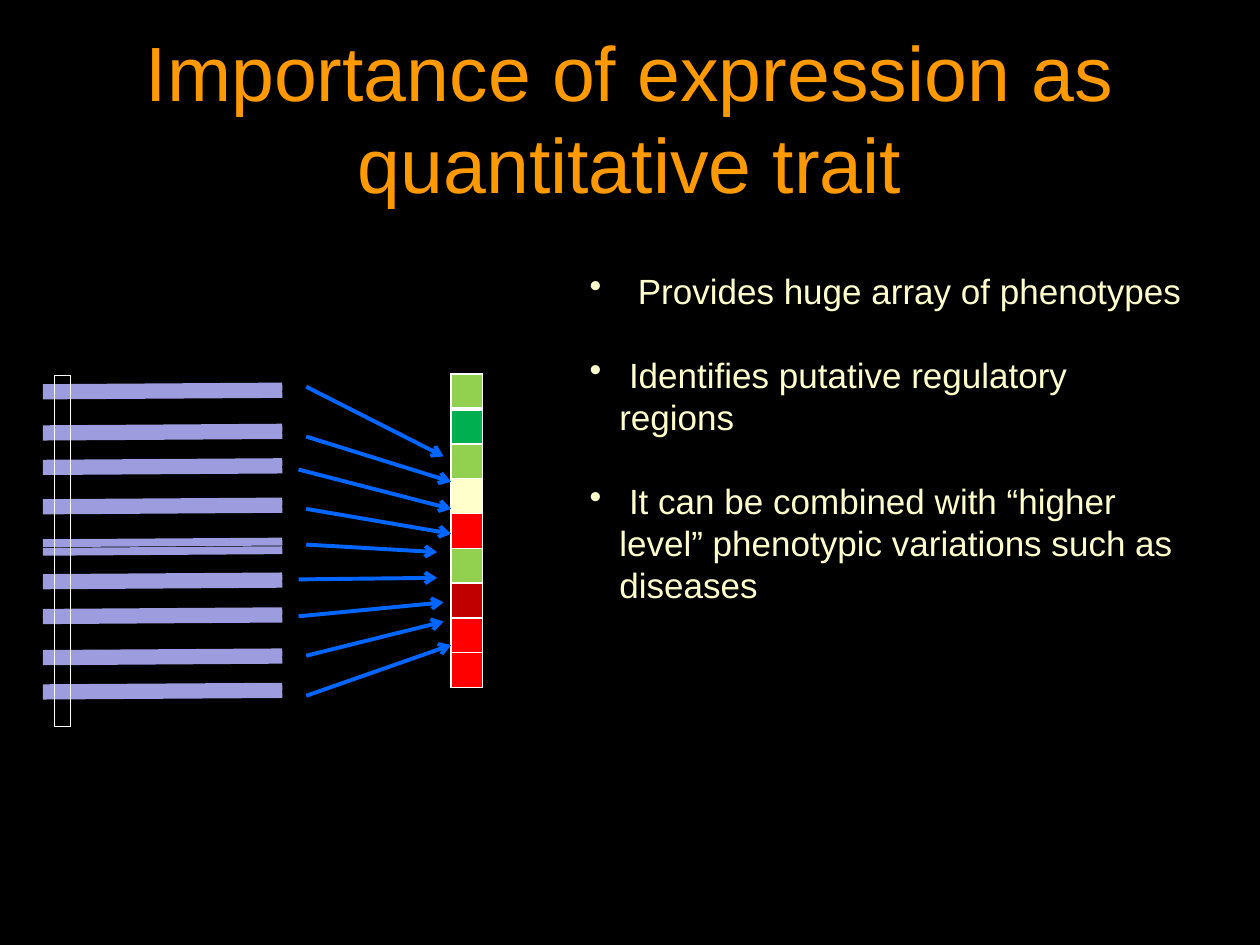
from lxml import etree
from pptx import Presentation
from pptx.dml.color import RGBColor
from pptx.enum import shapes, text
from pptx.oxml import ns
from pptx.util import Pt

BLACK = RGBColor(0x00, 0x00, 0x00)
WHITE = RGBColor(0xFF, 0xFF, 0xFF)
ORANGE = RGBColor(0xFF, 0x99, 0x00)
CREAM = RGBColor(0xFF, 0xFF, 0xCC)
LAVENDER = RGBColor(0x9C, 0x9C, 0xDF)
BLUE = RGBColor(0x00, 0x66, 0xFF)
LIME = RGBColor(0x92, 0xD0, 0x50)
GREEN = RGBColor(0x00, 0xB0, 0x50)
RED = RGBColor(0xFF, 0x00, 0x00)
DARK_RED = RGBColor(0xC0, 0x00, 0x00)


def add_line(group, x1, y1, x2, y2, color, width):
    c = group.shapes.add_connector(shapes.MSO_CONNECTOR.STRAIGHT,
                                   Pt(x1), Pt(y1), Pt(x2), Pt(y2))
    c.line.color.rgb = color
    c.line.width = Pt(width)
    etree.SubElement(c._element.spPr, ns.qn("a:effectLst"))
    return c


def add_border(cell, side, width):
    """Draw a white border; side is L, R, T or B, called in that order."""
    ln = etree.SubElement(cell._tc.get_or_add_tcPr(), ns.qn(f"a:ln{side}"),
                          w=str(Pt(width)))
    fill = etree.SubElement(ln, ns.qn("a:solidFill"))
    etree.SubElement(fill, ns.qn("a:srgbClr"), val=str(WHITE))


prs = Presentation()
prs.slide_width, prs.slide_height = Pt(720), Pt(540)
s = prs.slides.add_slide(prs.slide_layouts[6])
s.background.fill.solid()
s.background.fill.fore_color.rgb = BLACK

# Title
tf = s.shapes.add_textbox(Pt(36), Pt(21.6), Pt(648), Pt(90)).text_frame
tf.word_wrap = True
tf.vertical_anchor = text.MSO_ANCHOR.MIDDLE
p = tf.paragraphs[0]
p.text = "Importance of expression as quantitative trait"
p.alignment = text.PP_ALIGN.CENTER
p.font.name, p.font.size = "Arial", Pt(44)
p.font.color.rgb = ORANGE

# Bullets: text and left margin
BULLET_INDENT = 17
bullets = [
    (" Provides huge array of phenotypes", 22),
    (" Identifies putative regulatory regions", BULLET_INDENT),
    (" It can be combined with “higher level” phenotypic variations "
     "such as diseases", BULLET_INDENT),
]
tf = s.shapes.add_textbox(Pt(329.8), Pt(150.5), Pt(354.2), Pt(200.9)).text_frame
tf.word_wrap = True
for i, (words, margin) in enumerate(bullets):
    p = tf.add_paragraph() if i else tf.paragraphs[0]
    p.text = words
    p.line_spacing = Pt(24)
    p.space_before = Pt(24 if i else 0)
    p.font.name, p.font.size = "Arial", Pt(20)
    p.font.color.rgb = CREAM
    pPr = p._p.get_or_add_pPr()
    pPr.set("marL", str(Pt(margin)))
    pPr.set("indent", str(-Pt(margin)))
    bullet = etree.Element(ns.qn("a:buChar"), char="•")
    pPr.find(ns.qn("a:defRPr")).addprevious(bullet)

# Chromosome pairs: top of each pair and distance between its two strands
pairs = [(221.8, 4.2), (245.3, 4.2), (265, 4.2), (287.5, 4.2), (310.4, 4.9),
         (330.3, 4.2), (350.2, 4.2), (373.7, 4.2), (393.3, 4.2)]
strands = s.shapes.add_group_shape()
for top, gap in pairs:
    for y in (top, top + gap):
        add_line(strands, 24.5, y, 161.3, y - 0.9, LAVENDER, 4.5)
marker = strands.shapes.add_shape(shapes.MSO_SHAPE.RECTANGLE,
                                  Pt(31), Pt(214.6), Pt(9.4), Pt(200.5))
marker.shadow.inherit = False
marker.fill.background()
marker.line.color.rgb = WHITE
marker.line.width = Pt(0.75)

# Expression column
levels = [LIME, GREEN, LIME, CREAM, RED, LIME, DARK_RED, RED, RED]
ROW = 19.92
table = s.shapes.add_table(len(levels), 1, Pt(257.8), Pt(213.8),
                           Pt(18), Pt(ROW * len(levels))).table
table.first_row = table.horz_banding = False
for i, level in enumerate(levels):
    table.rows[i].height = Pt(ROW)
    cell = table.cell(i, 0)
    cell.margin_left = cell.margin_right = 0
    cell.margin_top = cell.margin_bottom = 0
    cell.text_frame.paragraphs[0]._p.get_or_add_endParaRPr().set("sz", "800")
    for side in "LRTB":
        thick = (i, side) in ((0, "B"), (1, "T"))
        add_border(cell, side, 3 if thick else 1)
    cell.fill.solid()
    cell.fill.fore_color.rgb = level

# Arrows from each pair to the expression column
arrows = [(175, 221, 253.5, 260.8), (175, 249.5, 257.8, 275.3),
          (170.6, 268.3, 257.8, 290.8), (175, 290.8, 257.8, 305),
          (175, 311.2, 249.8, 315.5), (170.6, 331.1, 249.8, 330.2),
          (170.6, 352.2, 253.5, 344.2), (175, 374.7, 253.5, 355.2),
          (175, 397.6, 257.8, 368.6)]
links = s.shapes.add_group_shape()
for ends in arrows:
    arrow = add_line(links, *ends, BLUE, 2.25)
    etree.SubElement(arrow.line._get_or_add_ln(), ns.qn("a:tailEnd"), type="arrow")

prs.save("out.pptx")
